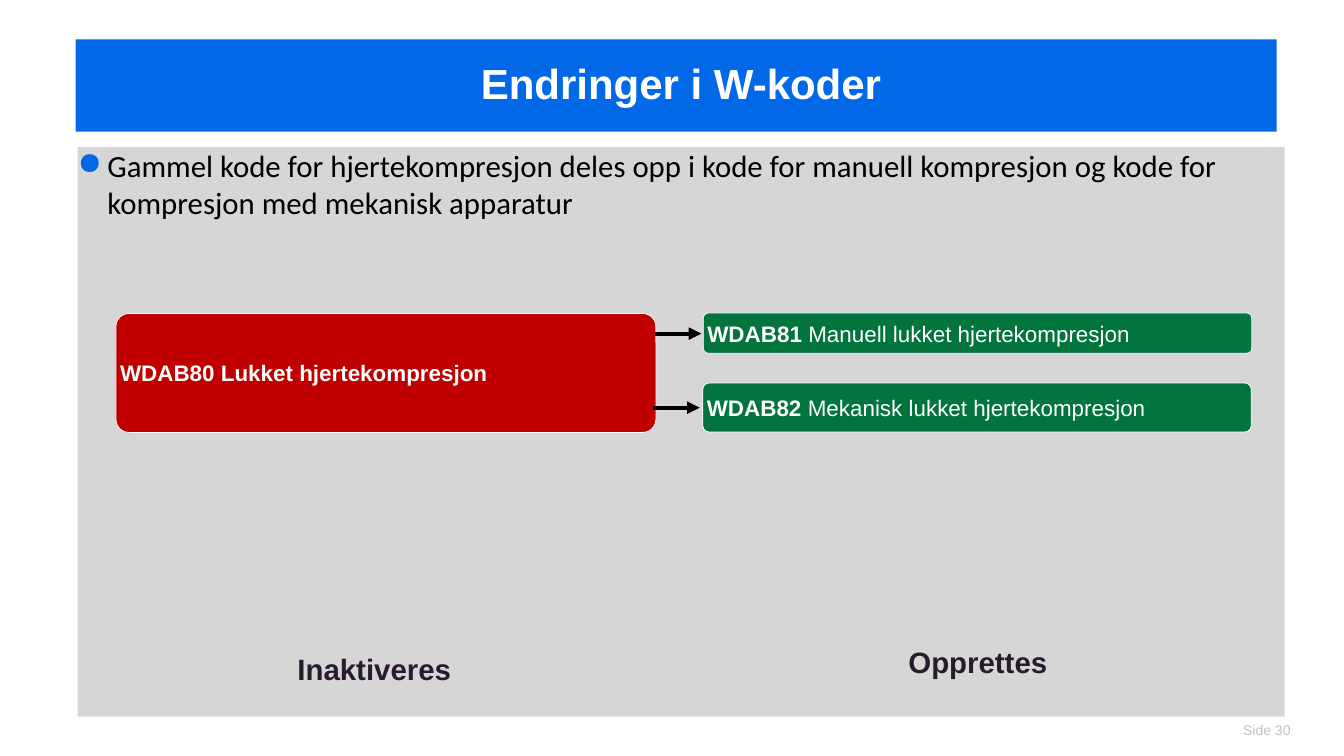
import dataclasses
import typing

import lxml.etree
import pptx
import pptx.dml.color
import pptx.enum.shapes
import pptx.enum.text
import pptx.oxml.ns
import pptx.util

WIDTH, HEIGHT = 26.66, 15
BLUE, GREY, RED, GREEN = "0169E8", "D6D6D6", "C00000", "02743E"
WHITE, BLACK, PLUM, SILVER = "FFFFFF", "000000", "281C2C", "C1C1C1"
SHAPES = pptx.enum.shapes.MSO_SHAPE
ALIGN = pptx.enum.text.PP_ALIGN
ANCHOR = pptx.enum.text.MSO_ANCHOR


class Area(typing.NamedTuple):
    """A rectangle in percent of the slide's width and height."""

    left: float
    top: float
    width: float
    height: float


@dataclasses.dataclass
class CodeBox:
    """A rounded box that names a procedure code."""

    area: Area
    fill: str
    runs: list[tuple[str, bool]]
    corner: float


@dataclasses.dataclass
class Caption:
    """A plain line of text on the slide."""

    area: Area
    text: str
    inset: float
    format: dict
    align: typing.Any = ALIGN.LEFT
    anchor: typing.Any = ANCHOR.TOP
    space_after: float = 0


class Arrow(typing.NamedTuple):
    """A horizontal arrow in percent of the slide's size."""

    start: float
    end: float
    row: float


HEADING = {"name": "Arial", "size": 60, "bold": True, "color": WHITE}
BODY = {"name": "Calibri", "size": 44, "bold": False, "color": BLACK}
CODE = {"name": "Arial", "size": 32, "color": WHITE}
LABEL = {"name": "Arial", "size": 42, "bold": True, "color": PLUM}
FOOTER = {"name": "Arial", "size": 20, "bold": False, "color": SILVER}

TITLE_AREA = Area(5.63, 5.2, 89.35, 12.2)
PANEL_AREA = Area(5.78, 19.47, 89.8, 75.33)
PANEL_TEXT = (
    "Gammel kode for hjertekompresjon deles opp i kode for manuell kompresjon "
    "og kode for kompresjon med mekanisk apparatur"
)
CODE_BOXES = [
    CodeBox(Area(8.63, 41.47, 40.17, 15.73), RED,
            [("WDAB80 Lukket hjertekompresjon", True)], 0.11),
    CodeBox(Area(52.33, 41.4, 40.81, 5.33), GREEN,
            [("WDAB81 ", True), ("Manuell lukket hjertekompresjon", False)], 0.13),
    CodeBox(Area(52.29, 50.67, 40.81, 6.47), GREEN,
            [("WDAB82 ", True), ("Mekanisk lukket hjertekompresjon", False)], 0.13),
]
CAPTIONS = [
    Caption(Area(19.88, 83.73, 16.2, 12.73), "Inaktiveres", 0.6, LABEL, space_after=10),
    Caption(Area(65.34, 82.87, 16.2, 12.73), "Opprettes", 0.6, LABEL, space_after=10),
    Caption(Area(90.14, 95.27, 5.89, 2.67), "Side 30", 0, FOOTER, ALIGN.RIGHT, ANCHOR.MIDDLE),
]
ARROWS = [Arrow(48.76, 52.18, 44.13), Arrow(48.61, 52.06, 53.93)]


def color(value: str) -> pptx.dml.color.RGBColor:
    """Turn a hex string into a colour."""
    return pptx.dml.color.RGBColor.from_string(value)


def across(share: float) -> int:
    """Turn a percentage of the slide's width into a length."""
    return pptx.util.Inches(WIDTH * share / 100)


def down(share: float) -> int:
    """Turn a percentage of the slide's height into a length."""
    return pptx.util.Inches(HEIGHT * share / 100)


def place(area: Area) -> tuple[int, int, int, int]:
    """Give the left, top, width and height of an area."""
    return across(area.left), down(area.top), across(area.width), down(area.height)


def add_element(parent: typing.Any, tag: str, **attributes: str) -> typing.Any:
    """Append a drawing element to a parent element."""
    return lxml.etree.SubElement(parent, pptx.oxml.ns.qn(tag), attributes)


def apply_format(font: typing.Any, values: dict) -> None:
    """Set the attributes of a font."""
    for name, value in values.items():
        if name == "color":
            font.color.rgb = color(value)
        else:
            setattr(font, name, pptx.util.Pt(value) if name == "size" else value)


def set_frame(frame: typing.Any, inset: float, anchor: typing.Any) -> None:
    """Wrap a text frame, anchor it and set equal margins."""
    frame.word_wrap = True
    frame.vertical_anchor = anchor
    for side in ("left", "top", "right", "bottom"):
        setattr(frame, f"margin_{side}", pptx.util.Inches(inset))


def add_span(para: typing.Any, text: str, values: dict) -> None:
    """Add one formatted run to a paragraph."""
    span = para.add_run()
    span.text = text
    apply_format(span.font, values)


def fill_title(page: typing.Any) -> None:
    """Place and format the title placeholder."""
    box = page.shapes.title
    box.left, box.top, box.width, box.height = place(TITLE_AREA)
    box.fill.solid()
    box.fill.fore_color.rgb = color(BLUE)
    set_frame(box.text_frame, 0, ANCHOR.MIDDLE)
    box.text_frame.margin_left = pptx.util.Inches(0.2)
    para = box.text_frame.paragraphs[0]
    para.alignment = ALIGN.CENTER
    para.line_spacing = 0.9
    add_span(para, "Endringer i W-koder", HEADING)


def add_panel(page: typing.Any) -> None:
    """Draw the grey panel with its bullet."""
    box = page.shapes.add_shape(SHAPES.RECTANGLE, *place(PANEL_AREA))
    box.shadow.inherit = False
    box.fill.solid()
    box.fill.fore_color.rgb = color(GREY)
    box.line.fill.background()
    set_frame(box.text_frame, 0, ANCHOR.TOP)
    para = box.text_frame.paragraphs[0]
    para.alignment = ALIGN.LEFT
    properties = para._p.get_or_add_pPr()
    indent = pptx.util.Inches(0.59)
    properties.set("marL", str(indent))
    properties.set("indent", str(-indent))
    add_element(add_element(properties, "a:buClr"), "a:srgbClr", val=BLUE)
    add_element(properties, "a:buChar", char="●")
    add_span(para, PANEL_TEXT, BODY)


def add_code_box(page: typing.Any, item: CodeBox) -> None:
    """Draw a rounded code box with its text."""
    box = page.shapes.add_shape(SHAPES.ROUNDED_RECTANGLE, *place(item.area))
    box.adjustments[0] = item.corner
    box.shadow.inherit = False
    box.fill.solid()
    box.fill.fore_color.rgb = color(item.fill)
    box.line.color.rgb = color(WHITE)
    box.line.width = pptx.util.Pt(1)
    corner_inset = 0.29 * item.corner * box.height.inches
    set_frame(box.text_frame, max(0, 0.08 - corner_inset), ANCHOR.MIDDLE)
    para = box.text_frame.paragraphs[0]
    para.alignment = ALIGN.LEFT
    for text, bold in item.runs:
        add_span(para, text, CODE | {"bold": bold})


def add_caption(page: typing.Any, item: Caption) -> None:
    """Add a text box with one line."""
    box = page.shapes.add_textbox(*place(item.area))
    set_frame(box.text_frame, item.inset, item.anchor)
    para = box.text_frame.paragraphs[0]
    para.alignment = item.align
    para.space_after = pptx.util.Pt(item.space_after)
    add_span(para, item.text, item.format)


def add_arrow(page: typing.Any, item: Arrow) -> None:
    """Draw an arrow from the old code to a new one."""
    row = down(item.row)
    line = page.shapes.add_connector(
        pptx.enum.shapes.MSO_CONNECTOR.STRAIGHT, across(item.start), row, across(item.end), row)
    line.line.color.rgb = color(BLACK)
    line.line.width = pptx.util.Pt(6)
    add_element(line.line._get_or_add_ln(), "a:tailEnd", type="triangle")
    add_element(line._element.spPr, "a:effectLst")


def main() -> None:
    """Build the slide and save it."""
    deck = pptx.Presentation()
    deck.slide_width, deck.slide_height = across(100), down(100)
    page = deck.slides.add_slide(deck.slide_layouts.get_by_name("Title Only"))
    fill_title(page)
    add_panel(page)
    for items, draw in ((CODE_BOXES, add_code_box), (CAPTIONS, add_caption), (ARROWS, add_arrow)):
        for item in items:
            draw(page, item)
    deck.save("out.pptx")


if __name__ == "__main__":
    main()
